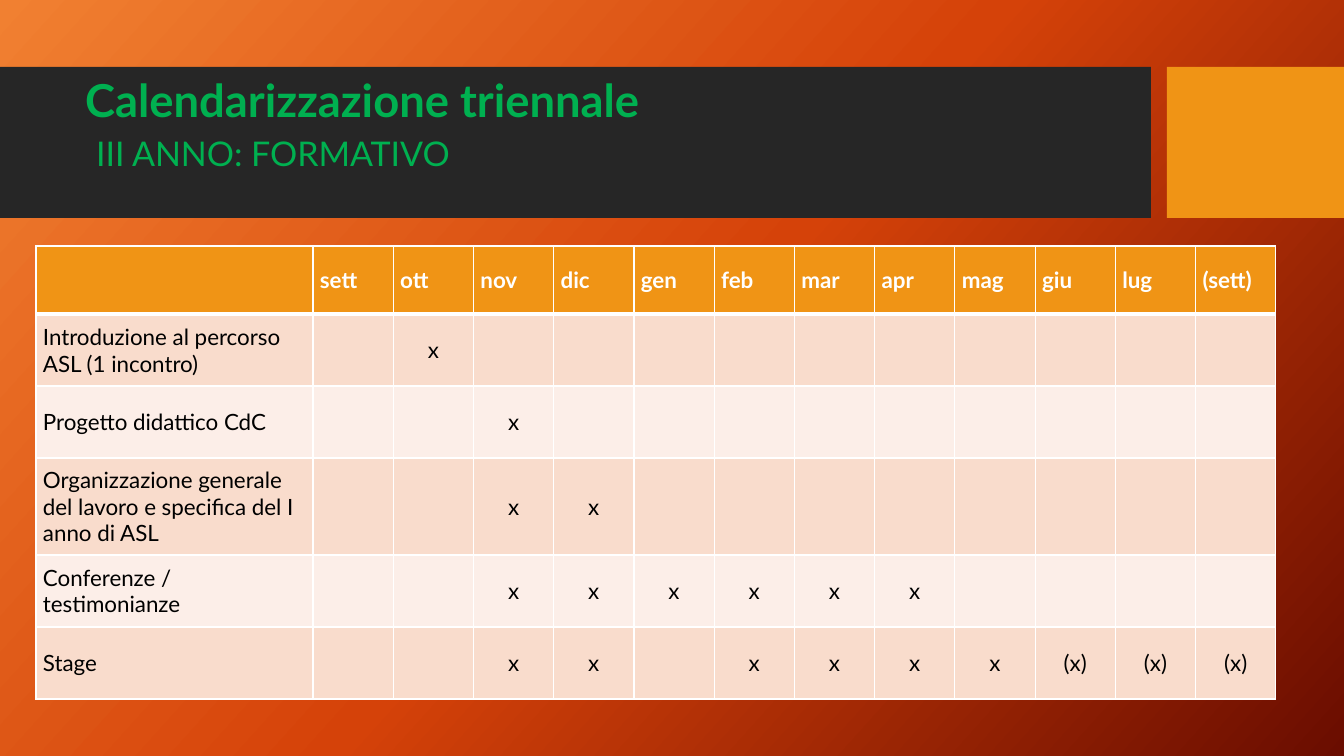
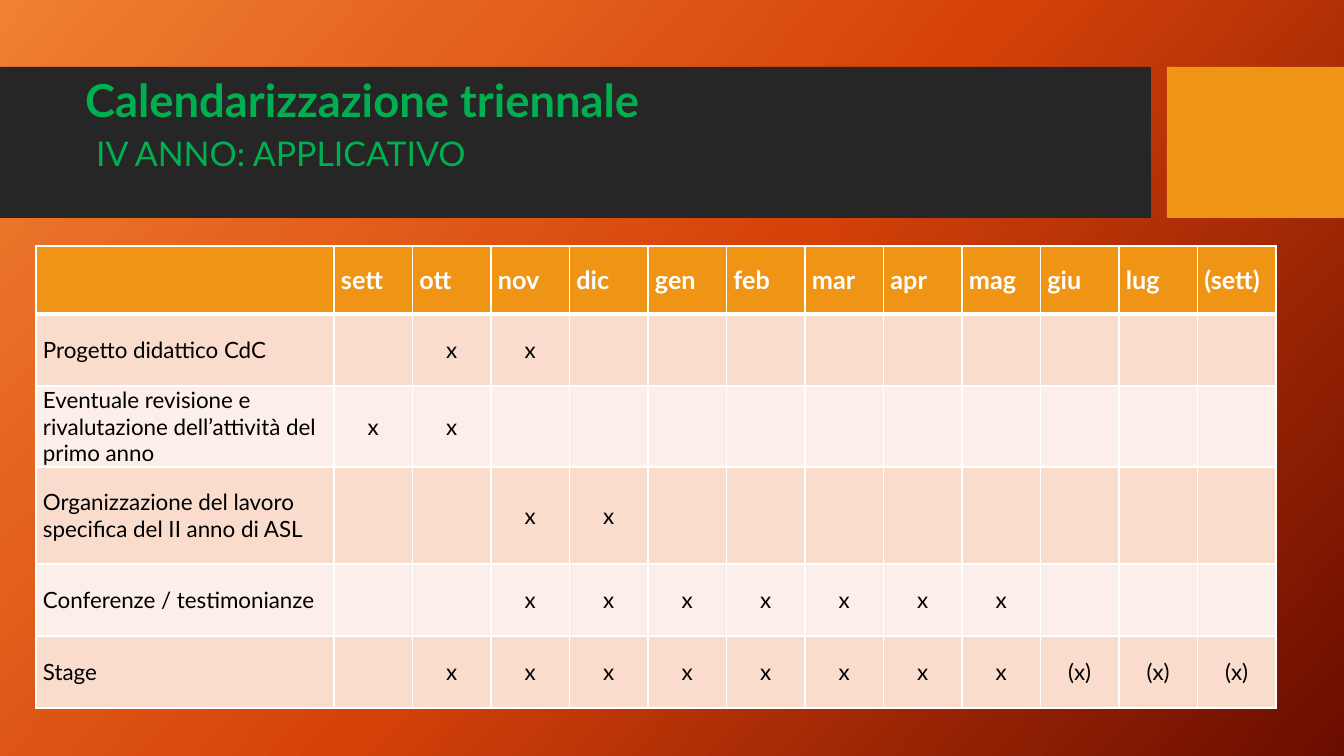
"""Build two slides with the yearly calendar of a three-year school programme."""
from copy import deepcopy

from lxml.etree import SubElement
from pptx import Presentation
from pptx.dml.color import RGBColor
from pptx.enum.shapes import MSO_SHAPE
from pptx.enum.text import MSO_ANCHOR, MSO_AUTO_SIZE, PP_ALIGN
from pptx.oxml.ns import qn
from pptx.util import Emu, Pt

SLIDE_WIDTH, SLIDE_HEIGHT = 1344, 756
EMU_PER_PX = 12192000 / SLIDE_WIDTH
COLORS = {
    "dark": "262626", "amber": "F09415", "green": "00B050",
    "white": "FFFFFF", "black": "000000",
    "odd": "F9DCCC", "even": "FCEEE8",
}
BACKDROP = [(0, "F18031"), (0.5, "D54209"), (1, "6A0D00")]
BANDS = [(0, 1151, "dark"), (1167, 177, "amber")]
MONTHS = "sett ott nov dic gen feb mar apr mag giu lug (sett)".split()
TABLE_LEFT, TABLE_TOP, TABLE_WIDTH, HEADER_HEIGHT = 36, 246, 1240, 68
TITLE_FONT = {"name": "Lato", "size": Pt(32.4), "bold": True}
SUBTITLE_FONT = {"name": "Lato", "size": Pt(24.3), "bold": False}
BODY_FONT = {"name": "Lato", "size": Pt(16), "bold": False}
LATE_MONTHS = "giu lug (sett)"
YEARS = [
    {
        "subtitle": "III ANNO: FORMATIVO", "label_width": 277, "header_size": 16,
        "rows": [
            ("Introduzione al percorso ASL (1 incontro)", 72, "ott", ""),
            ("Progetto didattico CdC", 72, "nov", ""),
            ("Organizzazione generale del lavoro e specifica del I anno di ASL",
             97, "nov dic", ""),
            ("Conferenze / testimonianze", 72, "nov dic gen feb mar apr", ""),
            ("Stage", 72, "nov dic feb mar apr mag", LATE_MONTHS),
        ],
    },
    {
        "subtitle": "IV ANNO: APPLICATIVO", "label_width": 298, "header_size": 18,
        "rows": [
            ("Progetto didattico CdC", 72, "ott nov", ""),
            ("Eventuale revisione e rivalutazione dell’attività del primo anno",
             81, "sett ott", ""),
            ("Organizzazione del lavoro specifica del II anno di ASL",
             97, "nov dic", ""),
            ("Conferenze / testimonianze", 72, "nov dic gen feb mar apr mag", ""),
            ("Stage", 72, "ott nov dic gen feb mar apr mag", LATE_MONTHS),
        ],
    },
]


def px(length):
    """Turn pixels into EMU."""
    return Emu(round(length * EMU_PER_PX))


def apply_format(target, values):
    """Set each named attribute of the target."""
    for name, value in values.items():
        setattr(target, name, value)


def rgb(name):
    """Look up a named colour."""
    return RGBColor.from_string(COLORS[name])


def set_backdrop(master):
    """Give the master a diagonal three-colour gradient."""
    fill = master.background.fill
    fill.gradient()
    fill.gradient_angle = 318
    stop_list = master.element.find(".//" + qn("a:gsLst"))
    while len(stop_list) < len(BACKDROP):
        stop_list.append(deepcopy(stop_list[-1]))
    for stop, (position, color) in zip(fill.gradient_stops, BACKDROP):
        stop.position = position
        stop.color.rgb = RGBColor.from_string(color)


def add_bands(layout, page):
    """Draw the title bands and place them on the shared layout."""
    for index, (left, width, color) in enumerate(BANDS):
        band = page.shapes.add_shape(
            MSO_SHAPE.RECTANGLE, px(left), px(67), px(width), px(151))
        band.shadow.inherit = False
        band.fill.solid()
        band.fill.fore_color.rgb = rgb(color)
        band.line.fill.background()
        band.element.nvSpPr.cNvPr.set("id", str(20 + index))
        layout.shapes.element.insert(2 + index, band.element)


def set_title(page, subtitle):
    """Place the title and write its two lines."""
    box = page.shapes.title
    apply_format(box, {"left": px(75), "top": px(71),
                       "width": px(1059), "height": px(110)})
    frame = box.text_frame
    apply_format(frame, {"word_wrap": True, "auto_size": MSO_AUTO_SIZE.NONE,
                         "vertical_anchor": MSO_ANCHOR.MIDDLE})
    frame.text = f"Calendarizzazione triennale\n{subtitle}"
    for para, font in zip(frame.paragraphs, (TITLE_FONT, SUBTITLE_FONT)):
        apply_format(para, {"alignment": PP_ALIGN.LEFT, "line_spacing": 0.9})
        apply_format(para.font, font)
        para.font.color.rgb = rgb("green")
    para.space_before = Pt(7)
    para._p.get_or_add_pPr().set("marL", str(px(11)))


def set_borders(cell, top, bottom):
    """Draw white cell borders with the given top and bottom widths."""
    properties = cell._tc.get_or_add_tcPr()
    for side, width in (("L", 1), ("R", 1), ("T", top), ("B", bottom)):
        line = SubElement(properties, qn(f"a:ln{side}"), w=str(Pt(width)))
        solid = SubElement(line, qn("a:solidFill"))
        SubElement(solid, qn("a:srgbClr"), val=COLORS["white"])


def fill_cell(cell, text, fill, color, font, alignment):
    """Write one table cell and paint it."""
    apply_format(cell, {"margin_left": px(7), "margin_right": px(7),
                        "margin_top": 0, "margin_bottom": 0,
                        "vertical_anchor": MSO_ANCHOR.MIDDLE})
    cell.fill.solid()
    cell.fill.fore_color.rgb = rgb(fill)
    cell.text = text
    para = cell.text_frame.paragraphs[0]
    para.alignment = alignment
    apply_format(para.font, font)
    para.font.color.rgb = rgb(color)


def mark_for(month, planned, possible):
    """Return the mark of a month in one activity row."""
    if month in planned.split():
        return "x"
    return "(x)" if month in possible.split() else ""


def add_calendar(page, year):
    """Add the table of activities by month."""
    rows = year["rows"]
    heights = [HEADER_HEIGHT] + [row[1] for row in rows]
    month_width = (TABLE_WIDTH - year["label_width"]) / len(MONTHS)
    widths = [year["label_width"]] + [month_width] * len(MONTHS)
    table = page.shapes.add_table(
        len(heights), len(widths), px(TABLE_LEFT), px(TABLE_TOP),
        px(TABLE_WIDTH), px(sum(heights))).table
    apply_format(table, {"first_row": False, "horz_banding": False})
    for column, width in zip(table.columns, widths):
        column.width = px(width)
    for row, height in zip(table.rows, heights):
        row.height = px(height)

    header_font = {**BODY_FONT, "size": Pt(year["header_size"]), "bold": True}
    for index, text in enumerate(["", *MONTHS]):
        cell = table.cell(0, index)
        set_borders(cell, 1, 3)
        fill_cell(cell, text, "amber", "white", header_font, PP_ALIGN.LEFT)
    for number, (label, _, planned, possible) in enumerate(rows, 1):
        marks = [mark_for(month, planned, possible) for month in MONTHS]
        for index, text in enumerate([label, *marks]):
            cell = table.cell(number, index)
            set_borders(cell, 3 if number == 1 else 1, 1)
            fill_cell(cell, text, "odd" if number % 2 else "even", "black",
                      BODY_FONT, PP_ALIGN.CENTER if index else PP_ALIGN.LEFT)


def main():
    """Build and save the deck."""
    deck = Presentation()
    apply_format(deck, {"slide_width": px(SLIDE_WIDTH),
                        "slide_height": px(SLIDE_HEIGHT)})
    layout = deck.slide_layouts.get_by_name("Title Only")
    set_backdrop(deck.slide_master)
    pages = [deck.slides.add_slide(layout) for _ in YEARS]
    add_bands(layout, pages[0])
    for page, year in zip(pages, YEARS):
        set_title(page, year["subtitle"])
        add_calendar(page, year)
    deck.save("out.pptx")


if __name__ == "__main__":
    main()
